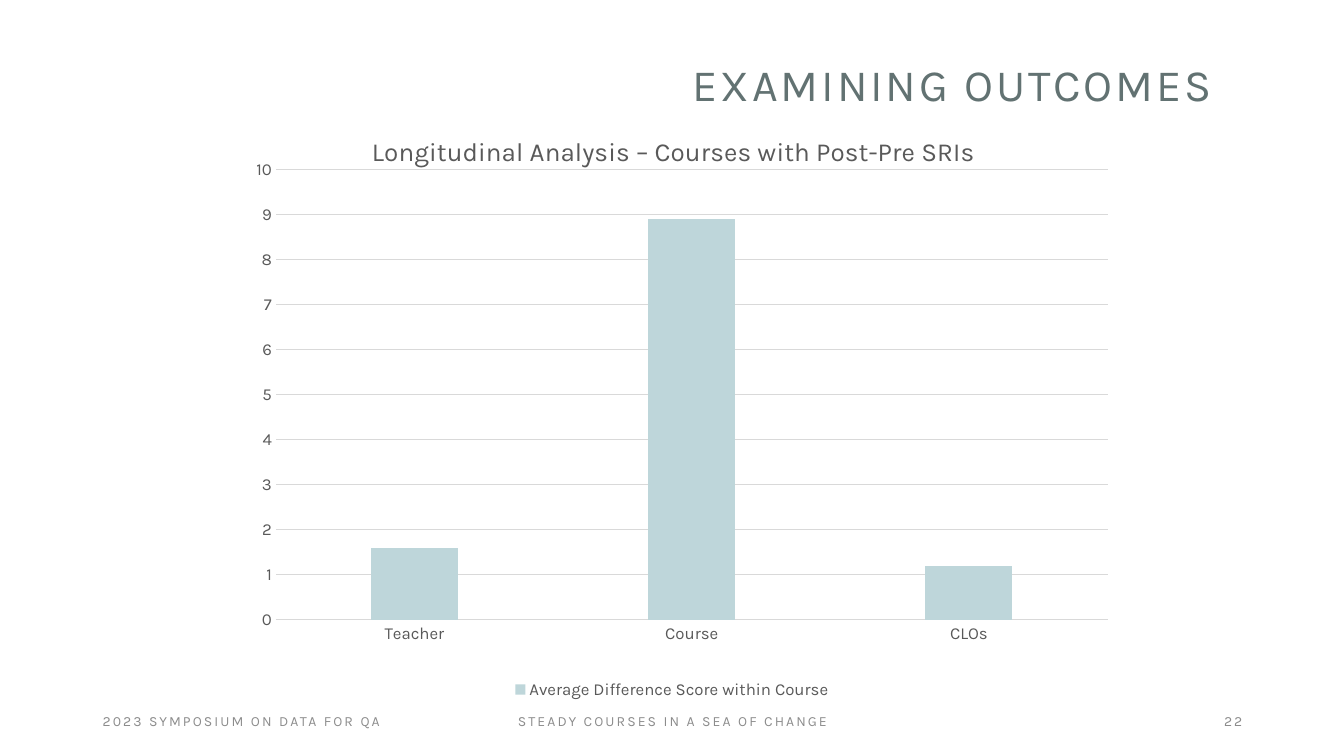
import pptx
import pptx.util
import pptx.chart.data
import pptx.dml.color
import pptx.enum.chart
import pptx.enum.text
import pptx.oxml

Inches = pptx.util.Inches
Pt = pptx.util.Pt
Align = pptx.enum.text.PP_ALIGN

COLORS = {
    "title": "627272",
    "foot": "8C8C8C",
    "label": "595959",
    "grid": "D9D9D9",
    "bar": "BED6DA",
}
FONT = "Karla"


def tint(name):
    return pptx.dml.color.RGBColor.from_string(COLORS[name])


def style(font, size, color):
    font.name = FONT
    font.size = Pt(size)
    font.bold = False
    font.color.rgb = tint(color)


def write(frame, text, size=12, color="label", align=Align.LEFT, gap=0, lead=None):
    para = frame.paragraphs[0]
    para.alignment = align
    para.line_spacing = lead
    run = para.add_run()
    run.text = text
    style(run.font, size, color)
    if gap:
        run.font._element.set("spc", str(round(gap * 100)))


def place(x, y, w=None, h=None):
    spots = {"x": x, "y": y, "w": w, "h": h}
    spots = {key: val for key, val in spots.items() if val is not None}
    target = '<c:layoutTarget val="inner"/>' if w is not None else ""
    modes = "".join(f'<c:{key}Mode val="edge"/>' for key in "xy")
    sizes = "".join(f'<c:{key} val="{val}"/>' for key, val in spots.items())
    return pptx.oxml.parse_xml(
        '<c:layout xmlns:c="http://schemas.openxmlformats.org/drawingml/2006/chart">'
        f"<c:manualLayout>{target}{modes}{sizes}</c:manualLayout></c:layout>"
    )


class Deck:
    def __init__(self):
        self.show = pptx.Presentation()
        self.show.slide_width = Inches(13.33)
        self.show.slide_height = Inches(7.5)
        self.slide = self.show.slides.add_slide(self.show.slide_layouts[6])

    def text(self, box, words, **form):
        shape = self.slide.shapes.add_textbox(*map(Inches, box))
        frame = shape.text_frame
        frame.word_wrap = True
        frame.vertical_anchor = pptx.enum.text.MSO_ANCHOR.MIDDLE
        write(frame, words, **form)

    def chart(self, box, title, series, cats, vals):
        data = pptx.chart.data.CategoryChartData()
        data.categories = cats
        data.add_series(series, vals)
        kind = pptx.enum.chart.XL_CHART_TYPE.COLUMN_CLUSTERED
        chart = self.slide.shapes.add_chart(kind, *map(Inches, box), data).chart
        style(chart.font, 12, "label")
        self.head(chart, title)
        self.bars(chart.plots[0])
        self.axes(chart)
        chart.has_legend = True
        chart.legend.position = pptx.enum.chart.XL_LEGEND_POSITION.BOTTOM
        chart.legend.include_in_layout = False
        style(chart.legend.font, 12, "label")

    def head(self, chart, title):
        chart.has_title = True
        write(chart.chart_title.text_frame, title, size=18.6, align=Align.CENTER)
        root = chart.chart_title._element
        for old in root.findall("{*}layout"):
            root.remove(old)
        root.find("{*}tx").addnext(place(0.16, 0.04))

    def bars(self, plot):
        plot.gap_width = 219
        plot.overlap = -27
        plot.vary_by_categories = False
        fill = plot.series[0].format.fill
        fill.solid()
        fill.fore_color.rgb = tint("bar")
        area = plot._element.getparent()
        for old in area.findall("{*}layout"):
            area.remove(old)
        area.insert(0, place(0.058, 0.107, 0.928, 0.753))

    def axes(self, chart):
        none = pptx.enum.chart.XL_TICK_MARK.NONE
        for axis in (chart.category_axis, chart.value_axis):
            axis.major_tick_mark = none
            axis.minor_tick_mark = none
            style(axis.tick_labels.font, 12, "label")
        rise = chart.value_axis
        rise.minimum_scale = 0
        rise.maximum_scale = 10
        rise.major_unit = 1
        rise.has_major_gridlines = True
        rise.format.line.fill.background()
        for part in (chart.category_axis, rise.major_gridlines):
            part.format.line.color.rgb = tint("grid")
            part.format.line.width = Pt(0.75)


def main():
    deck = Deck()
    deck.text((1.21, 0.55, 10.91, 0.62), "EXAMINING OUTCOMES",
              size=32, color="title", align=Align.RIGHT, gap=2, lead=0.9)
    feet = [
        (0.92, 3.31, "2023 SYMPOSIUM ON DATA FOR QA", Align.LEFT),
        (4.42, 4.5, "STEADY COURSES IN A SEA OF CHANGE", Align.CENTER),
        (9.42, 3, "22", Align.RIGHT),
    ]
    for left, width, words, align in feet:
        deck.text((left, 6.95, width, 0.4), words,
                  size=10, color="foot", align=align, gap=1.5)
    deck.chart((2.22, 1.05, 8.89, 5.93),
               "Longitudinal Analysis – Courses with Post-Pre SRIs",
               "Average Difference Score within Course",
               ("Teacher", "Course", "CLOs"), (1.6, 8.9, 1.2))
    deck.show.save("out.pptx")


if __name__ == "__main__":
    main()
